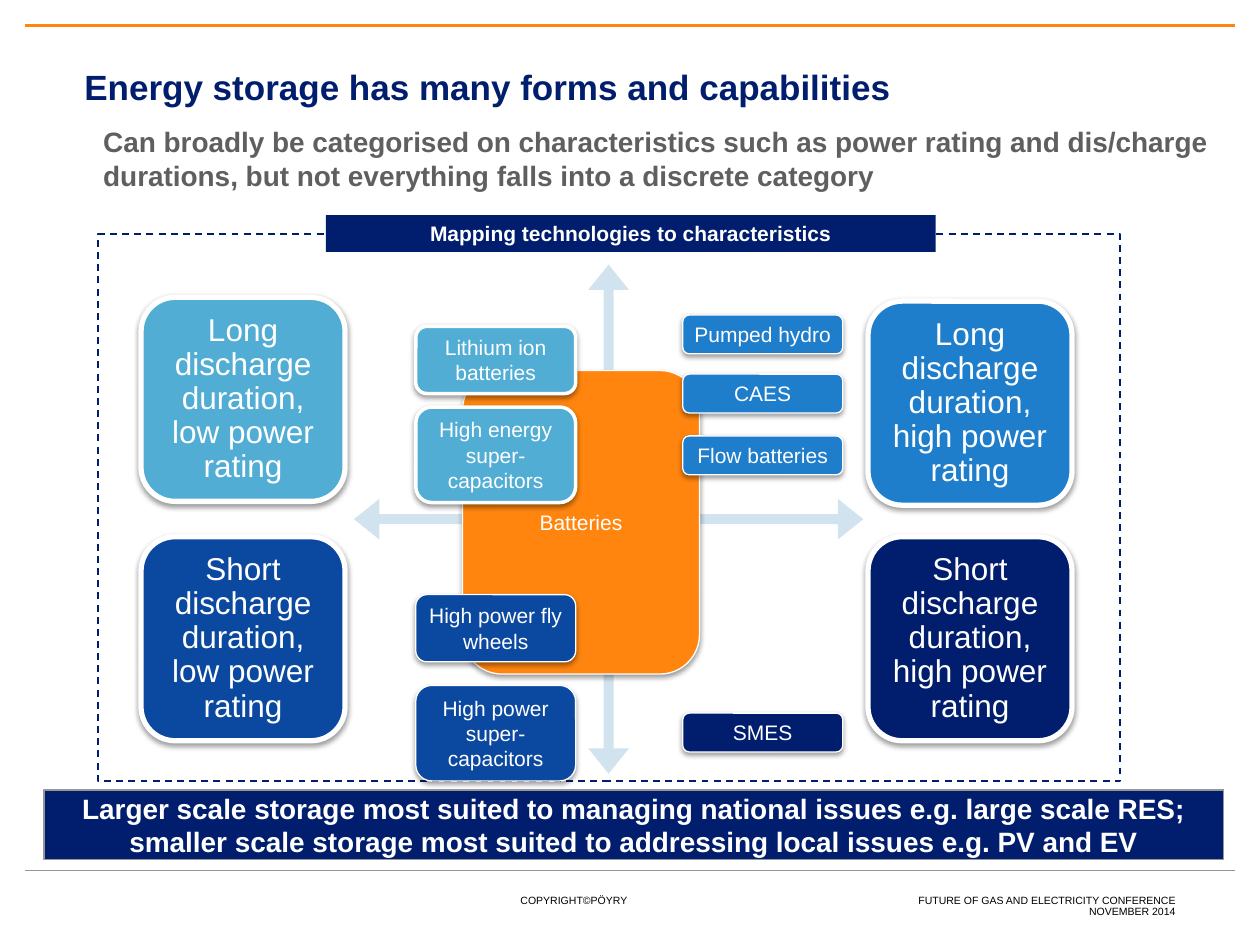
from lxml import etree
from pptx import Presentation
from pptx.dml.color import RGBColor
from pptx.enum.dml import MSO_LINE
from pptx.enum.shapes import MSO_CONNECTOR, MSO_SHAPE as SHAPE
from pptx.enum.text import MSO_ANCHOR as ANCHOR, PP_ALIGN as ALIGN
from pptx.oxml.ns import qn
from pptx.util import Pt

NAVY = RGBColor(0x00, 0x1E, 0x6D)
DEEP = RGBColor(0x0B, 0x49, 0xA0)
BLUE = RGBColor(0x1E, 0x7E, 0xCB)
SKY = RGBColor(0x52, 0xAD, 0xD5)
PALE = RGBColor(0xD1, 0xE3, 0xEF)
ORANGE = RGBColor(0xFF, 0x85, 0x0E)
GREY = RGBColor(0x96, 0x96, 0x96)
SLATE = RGBColor(0x5F, 0x5F, 0x5F)
BLACK = RGBColor(0, 0, 0)
WHITE = RGBColor(255, 255, 255)


def write(sp, text, size=12, color=WHITE, bold=False, align=ALIGN.CENTER,
          anchor=ANCHOR.MIDDLE, inset=3, spacing=None):
    tf = sp.text_frame
    tf.word_wrap = True
    tf.vertical_anchor = anchor
    tf.margin_left = tf.margin_right = Pt(inset)
    tf.margin_top = tf.margin_bottom = Pt(inset)
    p = tf.paragraphs[0]
    p.alignment = align
    p.line_spacing = spacing
    r = p.add_run()
    r.text = text
    r.font.name = "Arial"
    r.font.size = Pt(size)
    r.font.bold = bold
    r.font.color.rgb = color


def add_label(s, box, text, **fmt):
    write(s.shapes.add_textbox(*map(Pt, box)), text, inset=0, **fmt)


def add_block(s, kind, box, fill=None, line=None, width=0.75):
    sp = s.shapes.add_shape(kind, *map(Pt, box))
    sp.shadow.inherit = False
    if fill is None:
        sp.fill.background()
    else:
        sp.fill.solid()
        sp.fill.fore_color.rgb = fill
    if line is None:
        sp.line.fill.background()
    else:
        sp.line.color.rgb = line
        sp.line.width = Pt(width)
    return sp


def add_card(s, box, fill, text, width=0.75, **fmt):
    sp = add_block(s, SHAPE.ROUNDED_RECTANGLE, box, fill, WHITE, width)
    effects = sp._element.spPr.find(qn("a:effectLst"))
    shadow = etree.SubElement(effects, qn("a:outerShdw"), blurRad=str(Pt(3.1)),
                              dist=str(Pt(1.6)), dir="5400000", rotWithShape="0")
    color = etree.SubElement(shadow, qn("a:srgbClr"), val="000000")
    etree.SubElement(color, qn("a:alpha"), val="38000")
    write(sp, text, **fmt)


def add_rule(s, x, y, w, color, width):
    c = s.shapes.add_connector(MSO_CONNECTOR.STRAIGHT, Pt(x), Pt(y), Pt(x + w), Pt(y))
    c.line.color.rgb = color
    c.line.width = Pt(width)
    etree.SubElement(c._element.spPr, qn("a:effectLst"))


def add_header(s, x, y, w):
    add_rule(s, x, y, w, ORANGE, 1.5)
    add_label(s, (x + 33.8, y + 23, 640, 40), "Energy storage has many forms and capabilities",
              size=20, color=NAVY, bold=True, align=ALIGN.LEFT, anchor=ANCHOR.TOP)
    add_label(s, (x + 44.6, y + 56.9, 641, 45.4),
              "Can broadly be categorised on characteristics such as power rating and "
              "dis/charge durations, but not everything falls into a discrete category",
              size=16, color=SLATE, bold=True, align=ALIGN.LEFT, anchor=ANCHOR.TOP)


def add_frame(s, x, y, w, h):
    frame = add_block(s, SHAPE.RECTANGLE, (x, y, w, h), line=NAVY, width=1)
    frame.line.dash_style = MSO_LINE.DASH
    title = add_block(s, SHAPE.RECTANGLE, (x + 130, y - 11, 348.5, 21), NAVY)
    write(title, "Mapping technologies to characteristics", bold=True)


def add_quadrants(s, x, y):
    arrow = add_block(s, SHAPE.QUAD_ARROW, (x + 121.7, y - 18.7, 291, 291), PALE)
    for i, value in enumerate((0.02, 0.04, 0.05)):
        arrow.adjustments[i] = value
    side, right, low = 116.6, 415.4, 136.8
    for dx, dy, fill, duration, power in (
            (0, 0, SKY, "Long", "low"), (right, 2.2, BLUE, "Long", "high"),
            (0, low, DEEP, "Short", "low"), (right, low, NAVY, "Short", "high")):
        add_card(s, (x + dx, y + dy, side, side), fill,
                 f"{duration} discharge duration, {power} power rating",
                 width=3, size=18, inset=5, spacing=0.9)


def add_technologies(s, x, y):
    add_card(s, (x + 26.7, y + 31.7, 135.4, 173.5), ORANGE, "Batteries")
    right = 152.6
    for dx, dy, lines, fill, width, text in (
            (0, 6.5, 2, SKY, 2, "Lithium ion batteries"),
            (0, 52.6, 3, SKY, 2, "High energy super-capacitors"),
            (0, 159.8, 2, DEEP, 0.75, "High power fly wheels"),
            (0, 211.7, 3, DEEP, 0.75, "High power super-capacitors"),
            (right, 0, 1, BLUE, 0.75, "Pumped hydro"),
            (right, 33.8, 1, BLUE, 0.75, "CAES"),
            (right, 69.1, 1, BLUE, 0.75, "Flow batteries"),
            (right, 227.5, 1, NAVY, 0.75, "SMES")):
        add_card(s, (x + dx, y + dy, 91.4, 6 + 16.2 * lines), fill, text, width=width)


def add_takeaway(s, x, y, w, h):
    bar = add_block(s, SHAPE.RECTANGLE, (x, y, w, h), NAVY, GREY)
    write(bar, "Larger scale storage most suited to managing national issues e.g. large "
          "scale RES; smaller scale storage most suited to addressing local issues "
          "e.g. PV and EV", size=16, bold=True)


def add_footer(s, x, y, w):
    add_rule(s, x, y, w, GREY, 0.25)
    for dx, dy, width, align, text in (
            (283, 12.4, 65, ALIGN.LEFT, "COPYRIGHT©PÖYRY"),
            (408.2, 12.4, 249.1, ALIGN.RIGHT, "FUTURE OF GAS AND ELECTRICITY CONFERENCE"),
            (408.2, 19, 249.1, ALIGN.RIGHT, "NOVEMBER 2014")):
        add_label(s, (x + dx, y + dy, width, 8.6), text, size=6, color=BLACK, align=align)


def main():
    prs = Presentation()
    prs.slide_width, prs.slide_height = Pt(720), Pt(540)
    s = prs.slides.add_slide(prs.slide_layouts[6])
    add_header(s, 14.4, 14.4, 691.2)
    add_frame(s, 56.2, 133.9, 584, 312.5)
    add_quadrants(s, 80.6, 169.9)
    add_technologies(s, 237.6, 180)
    add_takeaway(s, 25.2, 451.4, 674, 39.6)
    add_footer(s, 14.4, 497.5, 691.2)
    prs.save("out.pptx")


if __name__ == "__main__":
    main()
